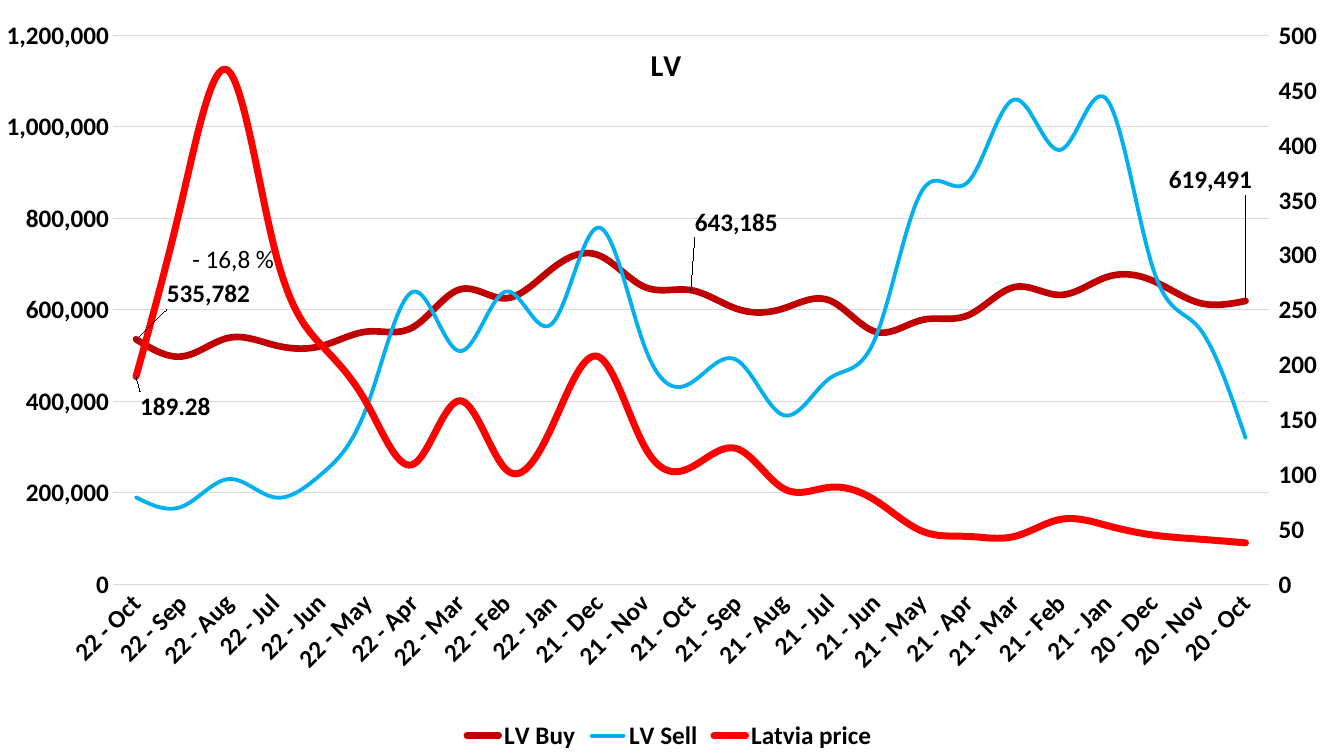
from copy import deepcopy
from dataclasses import dataclass

from pptx import Presentation
from pptx.chart.data import CategoryChartData
from pptx.dml.color import RGBColor
from pptx.enum.chart import XL_CHART_TYPE, XL_LABEL_POSITION, XL_LEGEND_POSITION, XL_TICK_MARK
from pptx.enum.text import MSO_AUTO_SIZE
from pptx.oxml import parse_xml
from pptx.oxml.ns import nsdecls, qn
from pptx.util import Pt

# Content: months run backwards from October 2022 to October 2020
MONTHS = ["Jan", "Feb", "Mar", "Apr", "May", "Jun", "Jul", "Aug", "Sep", "Oct", "Nov", "Dec"]
FIRST_MONTH, LAST_MONTH = 22 * 12 + 9, 20 * 12 + 9
CATEGORIES = [f"{month // 12} - {MONTHS[month % 12]}"
              for month in range(FIRST_MONTH, LAST_MONTH - 1, -1)]

BUY = [535782, 498266, 538821, 522925, 520794, 552548, 562656, 644658, 625363, 690155,
       719709, 650181, 643185, 602252, 603002, 620791, 552111, 577857, 588247, 649839,
       632712, 671757, 663476, 615410, 619491]
SELL = [190000, 170000, 230000, 190000, 240000, 390000, 640000, 510000, 640000, 570000,
        780000, 520000, 440000, 490000, 370000, 450000, 540000, 860000, 880000, 1060000,
        950000, 1060000, 690000, 560000, 320000]
PRICE = [189.28, 350.99, 467.75, 304.96, 218.29, 164.2, 109.4, 167.22, 104.72, 143.81,
         207.4, 125.39, 106.4, 123.5, 87.32, 88.32, 76.23, 48.42, 43.6, 43.55,
         59.15, 53.54, 44.86, 41.1, 37.72]

# Labels: point index -> shift from its usual place, as a share of the chart
SERIES = [
    dict(name="LV Buy", values=BUY, color="C00000", width=4.75, format="#,##0",
         labels={0: (0.02, -0.06), 12: (0, -0.09), 24: (-0.06, -0.16)}),
    dict(name="LV Sell", values=SELL, color="00B0F0", width=2.75, format="#,##0",
         labels={}),
    dict(name="Latvia price ", values=PRICE, color="FF0000", width=5, format="0.00",
         labels={0: (0, 0.04)}),
]
TITLE = "LV"
CHANGE_NOTE = "- 16,8 %"


@dataclass(frozen=True)
class Theme:
    font: str = "Calibri"
    text: RGBColor = RGBColor(0, 0, 0)
    grid: RGBColor = RGBColor(0xD9, 0xD9, 0xD9)
    body: float = 18
    title: float = 21.6
    hairline: float = 0.75


THEME = Theme()
PAGE_WIDTH, PAGE_HEIGHT = Pt(960), Pt(540)


def style_font(font, size=THEME.body, bold=True):
    font.name, font.size, font.bold = THEME.font, Pt(size), bold
    font.color.rgb = THEME.text


def manual_layout(x, y, size=None):
    """Layout element: a shift or corner, or an inner plot area when size is given."""
    edges = '<c:xMode val="edge"/><c:yMode val="edge"/>'
    target, extent = "", ""
    if size:
        target = '<c:layoutTarget val="inner"/>' + edges
        extent = f'<c:w val="{size[0]}"/><c:h val="{size[1]}"/>'
    return parse_xml(f'<c:layout {nsdecls("c")}><c:manualLayout>{target}'
                     f'<c:x val="{x}"/><c:y val="{y}"/>{extent}</c:manualLayout></c:layout>')


def replace_layout(parent, layout, index):
    for old in parent.findall(qn("c:layout")):
        parent.remove(old)
    parent.insert(index, layout)


def style_series(series, item):
    series.smooth = True
    line = series.format.line
    line.width = Pt(item["width"])
    line.color.rgb = RGBColor.from_string(item["color"])
    for outline in series.format.line._ln.xpath("."):
        outline.set("cap", "rnd")
    if not item["labels"]:
        return
    labels = series.data_labels
    labels.show_value = False
    labels.number_format, labels.number_format_is_linked = item["format"], False
    style_font(labels.font)
    for index in item["labels"]:
        label = series.points[index].data_label
        style_font(label.font)
        label.position = XL_LABEL_POSITION.RIGHT
    group = series._element.find(qn("c:dLbls"))
    for label in group.findall(qn("c:dLbl")):
        index = int(label.find(qn("c:idx")).get("val"))
        replace_layout(label, manual_layout(*item["labels"][index]), 1)


def move_last_series_to_right_axis(plot_area):
    left_plot = plot_area.find(qn("c:lineChart"))
    right_plot = deepcopy(left_plot)
    left_plot.remove(left_plot.findall(qn("c:ser"))[-1])
    for series in right_plot.findall(qn("c:ser"))[:-1]:
        right_plot.remove(series)
    category_id, value_id = "50010", "50020"
    for axis, number in zip(right_plot.findall(qn("c:axId")), (category_id, value_id)):
        axis.set("val", number)
    left_plot.addnext(right_plot)

    # Right value axis, then its hidden category axis
    text = deepcopy(plot_area.find(qn("c:valAx")).find(qn("c:txPr")))
    right_axis = parse_xml(
        f'<c:valAx {nsdecls("c", "a")}><c:axId val="{value_id}"/>'
        '<c:scaling><c:orientation val="minMax"/><c:max val="500"/><c:min val="0"/></c:scaling>'
        '<c:delete val="0"/><c:axPos val="r"/><c:numFmt formatCode="General" sourceLinked="0"/>'
        '<c:majorTickMark val="out"/><c:minorTickMark val="none"/><c:tickLblPos val="nextTo"/>'
        f'<c:spPr><a:ln><a:noFill/></a:ln></c:spPr><c:crossAx val="{category_id}"/>'
        '<c:crosses val="max"/><c:crossBetween val="between"/><c:majorUnit val="50"/></c:valAx>')
    right_axis.find(qn("c:spPr")).addnext(text)
    hidden_axis = parse_xml(
        f'<c:catAx {nsdecls("c")}><c:axId val="{category_id}"/>'
        '<c:scaling><c:orientation val="minMax"/></c:scaling><c:delete val="1"/>'
        f'<c:axPos val="b"/><c:crossAx val="{value_id}"/><c:crosses val="autoZero"/></c:catAx>')
    plot_area.find(qn("c:valAx")).addnext(right_axis)
    right_axis.addnext(hidden_axis)


def add_price_chart(page):
    data = CategoryChartData()
    data.categories = CATEGORIES
    for item in SERIES:
        data.add_series(item["name"], item["values"], number_format=item["format"])
    chart = page.shapes.add_chart(XL_CHART_TYPE.LINE, 0, 0, PAGE_WIDTH, PAGE_HEIGHT, data).chart
    style_font(chart.font)

    # Title and legend
    chart.has_title = True
    title = chart.chart_title
    title.text_frame.text = TITLE
    style_font(title.text_frame.paragraphs[0].runs[0].font, THEME.title)
    title.include_in_layout = False
    title_box = chart.element.xpath("c:chart/c:title")[0]
    corner = manual_layout(0.48, 0.05)
    corner[0].insert(0, parse_xml(f'<c:xMode {nsdecls("c")} val="edge"/>'))
    corner[0].insert(1, parse_xml(f'<c:yMode {nsdecls("c")} val="edge"/>'))
    replace_layout(title_box, corner, 1)
    title_box.find(qn("c:overlay")).set("val", "1")
    chart.has_legend = True
    chart.legend.position = XL_LEGEND_POSITION.BOTTOM
    chart.legend.include_in_layout = False
    style_font(chart.legend.font)

    # Left and bottom axes
    months, amounts = chart.category_axis, chart.value_axis
    for axis in (months, amounts):
        axis.major_tick_mark = axis.minor_tick_mark = XL_TICK_MARK.NONE
        style_font(axis.tick_labels.font)
    amounts.has_major_gridlines = True
    for line in (months.format.line, amounts.major_gridlines.format.line):
        line.color.rgb, line.width = THEME.grid, Pt(THEME.hairline)
    amounts.format.line.fill.background()
    amounts.minimum_scale, amounts.maximum_scale, amounts.major_unit = 0, 1200000, 200000
    amounts.tick_labels.number_format = "#,##0"
    amounts.tick_labels.number_format_is_linked = False
    chart.element.xpath(".//c:catAx/c:txPr/a:bodyPr")[0].set("rot", "-2700000")

    # Lines, plot area and right axis
    for series, item in zip(chart.plots[0].series, SERIES):
        style_series(series, item)
    plot_area = chart.element.xpath("c:chart/c:plotArea")[0]
    replace_layout(plot_area, manual_layout(0.084, 0.047, (0.86, 0.726)), 0)
    move_last_series_to_right_axis(plot_area)


def add_change_note(page):
    box = page.shapes.add_textbox(Pt(130.3), Pt(170.6), Pt(87), Pt(29))
    frame = box.text_frame
    frame.text = CHANGE_NOTE
    frame.word_wrap = True
    frame.auto_size = MSO_AUTO_SIZE.SHAPE_TO_FIT_TEXT
    style_font(frame.paragraphs[0].runs[0].font, bold=False)


def main():
    deck = Presentation()
    deck.slide_width, deck.slide_height = PAGE_WIDTH, PAGE_HEIGHT
    page = deck.slides.add_slide(deck.slide_layouts[6])
    add_price_chart(page)
    add_change_note(page)
    deck.save("out.pptx")


if __name__ == "__main__":
    main()
